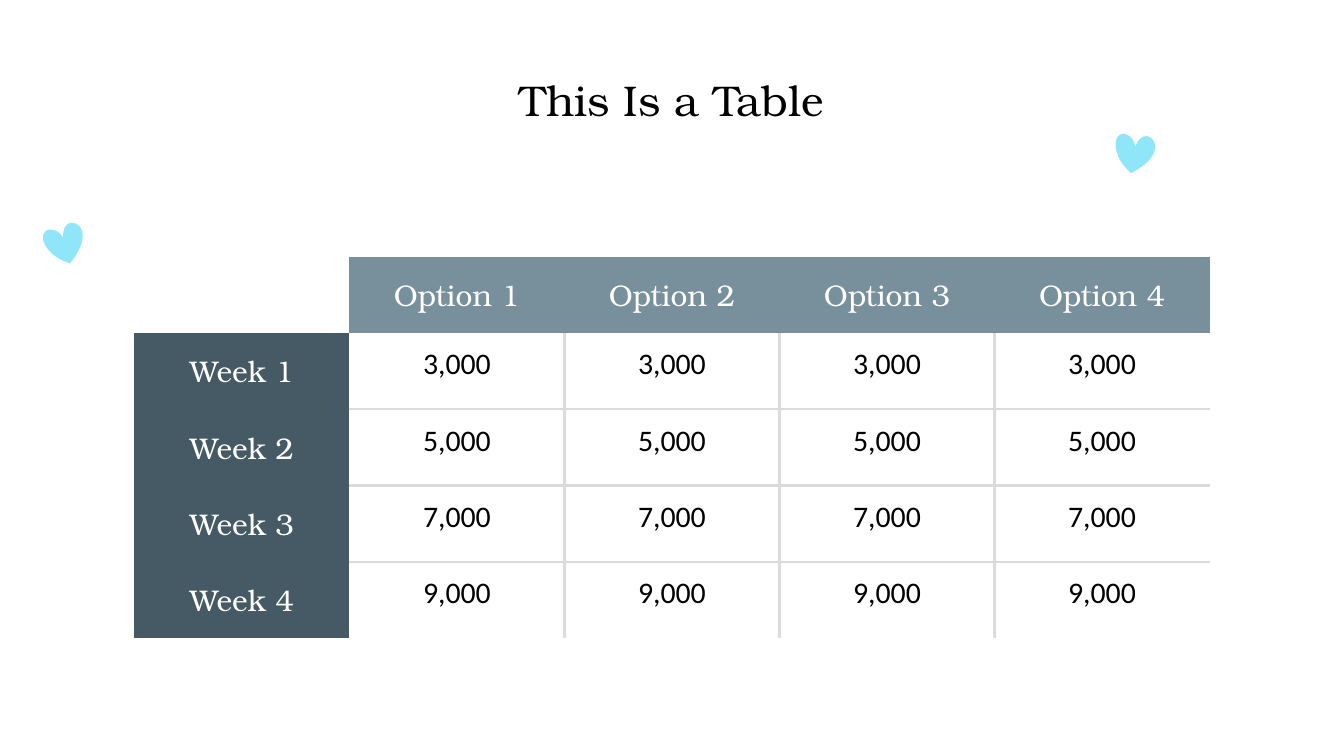
from lxml.etree import SubElement
from pptx import Presentation
from pptx.dml.color import RGBColor
from pptx.enum.text import MSO_ANCHOR, PP_ALIGN
from pptx.oxml.ns import qn
from pptx.util import Inches, Pt

SERIF, SANS = "TeX Gyre Bonum", "Calibri"
PLAIN_STYLE = "{2D5ABB26-0587-4C30-8999-92F81FD0307C}"
HEADS = [f"Option {n}" for n in range(1, 5)]
ROWS = [(f"Week {n}", f"{2 * n + 1},000") for n in range(1, 5)]

# Heart outline in inches: a start point, then Bezier curves
START = (0.24, 0)
CURVES = [
    ((0.24, 0), (0.23, 0), (0.22, 0)),
    ((0.16, 0.02), (0.17, 0.11), (0.17, 0.11)),
    ((0.17, 0.11), (0.14, 0.05), (0.08, 0.05)),
    ((0.08, 0.05), (0.07, 0.05), (0.06, 0.05)),
    ((0, 0.07), (0.01, 0.15), (0.07, 0.21)),
    ((0.12, 0.27), (0.22, 0.3), (0.22, 0.3)),
    ((0.22, 0.3), (0.29, 0.22), (0.31, 0.14)),
    ((0.33, 0.06), (0.29, 0), (0.24, 0)),
]


def color(code):
    return RGBColor.from_string(code)


def write(frame, text, font=SERIF, size=16, ink="000000", anchor=MSO_ANCHOR.MIDDLE):
    frame.word_wrap = True
    frame.vertical_anchor = anchor
    para = frame.paragraphs[0]
    para.alignment = PP_ALIGN.CENTER
    run = para.add_run()
    run.text = text
    run.font.name = font
    run.font.size = Pt(size)
    run.font.color.rgb = color(ink)


def set_pad(item):
    item.margin_left = item.margin_right = Inches(0.1)
    item.margin_top = item.margin_bottom = Inches(0.1)


def add_title(slide, text, left, top, width, height):
    title = slide.shapes.title
    title.left, title.top = Inches(left), Inches(top)
    title.width, title.height = Inches(width), Inches(height)
    set_pad(title.text_frame)
    write(title.text_frame, text, size=23)


def trace(steps=8):
    """Return the heart outline as a list of points."""
    points, last = [START], START
    for one, two, end in CURVES:
        for step in range(1, steps + 1):
            t = step / steps
            u = 1 - t
            points.append(tuple(
                u**3 * a + 3 * u * u * t * b + 3 * u * t * t * c + t**3 * d
                for a, b, c, d in zip(last, one, two, end)))
        last = end
    return points


def add_heart(slide, left, top, turn=0):
    points = [(Inches(left + x), Inches(top + y)) for x, y in trace()]
    form = slide.shapes.build_freeform(*points[0])
    form.add_line_segments(points[1:], close=True)
    heart = form.convert_to_shape()
    heart.rotation = turn
    heart.shadow.inherit = False
    heart.fill.solid()
    heart.fill.fore_color.rgb = color("90E6F9")
    heart.line.fill.background()


def set_edges(cell, sides):
    props = cell._tc.get_or_add_tcPr()
    for side in "LRTB":
        line = SubElement(props, qn(f"a:ln{side}"), w=str(Pt(1.5)))
        if side in sides:
            fill = SubElement(line, qn("a:solidFill"))
            SubElement(fill, qn("a:srgbClr"), val="DBDBDB")
        else:
            SubElement(line, qn("a:noFill"))


def style(cell, text, fill=None, sides="", **form):
    set_pad(cell)
    set_edges(cell, sides)
    if fill:
        cell.fill.solid()
        cell.fill.fore_color.rgb = color(fill)
    else:
        cell.fill.background()
    if text:
        write(cell.text_frame, text, **form)
        cell.vertical_anchor = form.get("anchor", MSO_ANCHOR.MIDDLE)


def add_grid(slide, left, top, width, height):
    rows, cols = len(ROWS) + 1, len(HEADS) + 1
    frame = slide.shapes.add_table(
        rows, cols, Inches(left), Inches(top), Inches(width), Inches(height))
    table = frame.table
    table._tbl.tblPr.find(qn("a:tableStyleId")).text = PLAIN_STYLE
    table.first_row = table.horz_banding = False
    for col in table.columns:
        col.width = Inches(width / cols)
    for row in table.rows:
        row.height = Inches(height / rows)

    style(table.cell(0, 0), "")
    for c, head in enumerate(HEADS, 1):
        style(table.cell(0, c), head, fill="78909C", ink="FFFFFF")
    for r, (week, value) in enumerate(ROWS, 1):
        style(table.cell(r, 0), week, fill="455A64", ink="FFFFFF")
        for c in range(1, cols):
            inner = {"L": c > 1, "R": c < cols - 1, "T": r > 1, "B": r < rows - 1}
            sides = [side for side, drawn in inner.items() if drawn]
            style(table.cell(r, c), value, sides=sides, font=SANS,
                  anchor=MSO_ANCHOR.TOP)


def main():
    deck = Presentation()
    deck.slide_width = Inches(10)
    deck.slide_height = Inches(10 * 9 / 16)
    slide = deck.slides.add_slide(deck.slide_layouts[5])
    add_heart(slide, 0.3, 1.66)
    add_heart(slide, 8.26, 0.98, turn=23.6)
    add_grid(slide, 1, 1.91, 8, 2.84)
    add_title(slide, "This Is a Table", 0.78, 0.6, 8.44, 0.28)
    deck.save("out.pptx")


if __name__ == "__main__":
    main()
